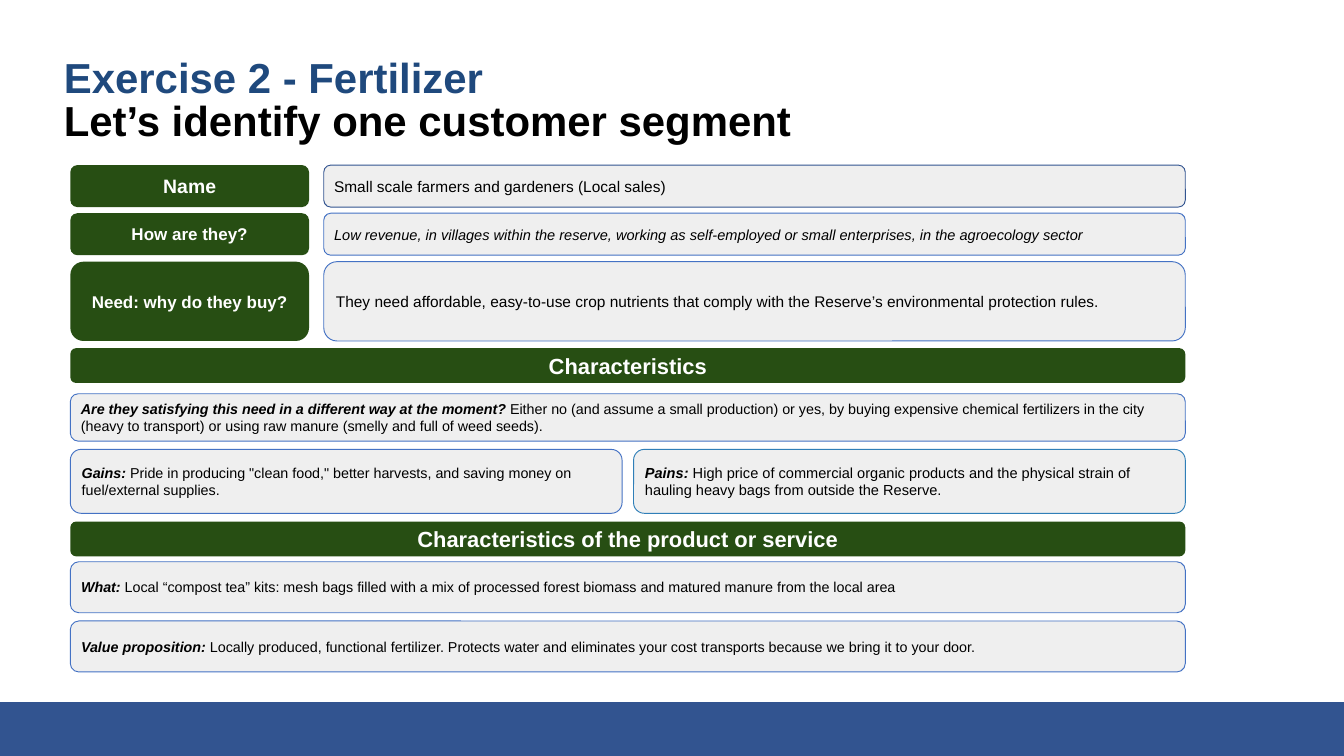
import dataclasses

import pptx
import pptx.dml.color
import pptx.enum.shapes
import pptx.enum.text
import pptx.util

Cm = pptx.util.Cm
ALIGN = pptx.enum.text.PP_ALIGN
ANCHOR = pptx.enum.text.MSO_ANCHOR
SHAPE = pptx.enum.shapes.MSO_SHAPE


@dataclasses.dataclass(frozen=True)
class Theme:
    font: str = "Arial"
    title: str = "1F497D"
    text: str = "000000"
    light: str = "FFFFFF"
    green: str = "274E13"
    panel: str = "EFEFEF"
    footer: str = "325490"
    border: str = "4472C4"
    border_pains: str = "2F7FB8"
    title_size: float = 33.1
    band_size: float = 17.3
    name_size: float = 15.3
    label_size: float = 13.4
    answer_size: float = 12.2
    note_size: float = 11.5
    body_size: float = 11.3


def rgb(value):
    return pptx.dml.color.RGBColor.from_string(value)


class SlideBuilder:
    def __init__(self, prs, theme):
        self.theme = theme
        self.s = prs.slides.add_slide(prs.slide_layouts[6])

    def frame(self, sp, anchor, side=0.0, edge=0.0):
        tf = sp.text_frame
        values = {
            "word_wrap": True,
            "vertical_anchor": anchor,
            "margin_left": Cm(side),
            "margin_right": Cm(side),
            "margin_top": Cm(edge),
            "margin_bottom": Cm(edge),
        }
        for name, value in values.items():
            setattr(tf, name, value)
        return tf

    def run(self, p, text, size, color, bold=False, italic=False):
        r = p.add_run()
        r.text = text
        values = {
            "name": self.theme.font,
            "size": pptx.util.Pt(size),
            "bold": bold,
            "italic": italic,
        }
        for name, value in values.items():
            setattr(r.font, name, value)
        r.font.color.rgb = rgb(color)

    def shape(self, kind, box, fill, line=None):
        sp = self.s.shapes.add_shape(kind, *map(Cm, box))
        sp.shadow.inherit = False
        sp.fill.solid()
        sp.fill.fore_color.rgb = rgb(fill)
        if line:
            sp.line.color.rgb = rgb(line)
            sp.line.width = pptx.util.Pt(0.75)
        else:
            sp.line.fill.background()
        return sp

    def footer(self, box):
        self.shape(SHAPE.RECTANGLE, box, self.theme.footer)

    def title(self, box, lines):
        sp = self.s.shapes.add_textbox(*map(Cm, box))
        tf = self.frame(sp, ANCHOR.TOP)
        for i, (text, color) in enumerate(lines):
            p = tf.add_paragraph() if i else tf.paragraphs[0]
            p.line_spacing = 0.85
            self.run(p, text, self.theme.title_size, color, bold=True)

    def label(self, box, text, size):
        sp = self.shape(SHAPE.ROUNDED_RECTANGLE, box, self.theme.green)
        p = self.frame(sp, ANCHOR.MIDDLE, 0.25, 0.13).paragraphs[0]
        p.alignment = ALIGN.CENTER
        self.run(p, text, size, self.theme.light, bold=True)

    def panel(self, box, text, size, lead="", italic=False, line=None):
        theme = self.theme
        sp = self.shape(SHAPE.ROUNDED_RECTANGLE, box, theme.panel, line or theme.border)
        p = self.frame(sp, ANCHOR.MIDDLE, 0.23, 0.1).paragraphs[0]
        p.alignment = ALIGN.LEFT
        if lead:
            self.run(p, lead + " ", size, theme.text, bold=True, italic=True)
        self.run(p, text, size, theme.text, italic=italic)


def main():
    prs = pptx.Presentation()
    prs.slide_width, prs.slide_height = Cm(37.44), Cm(21.06)
    theme = Theme()
    slide = SlideBuilder(prs, theme)

    left, width = 1.96, 31.06
    label_width, answer_width, half_width = 6.65, 24, 15.37
    answer_left = left + width - answer_width
    pains_left = left + width - half_width

    slide.footer((0, 19.56, 37.44, 1.5))
    slide.title((1.78, 1.65, 28.78, 1.09), [
        ("Exercise 2 - Fertilizer", theme.title),
        ("Let’s identify one customer segment", theme.text),
    ])

    profile = [
        (4.6, 1.17, "Name", theme.name_size,
         "Small scale farmers and gardeners (Local sales)",
         {"size": theme.answer_size, "line": theme.footer}),
        (5.94, 1.17, "How are they?", theme.label_size,
         "Low revenue, in villages within the reserve, working as self-employed "
         "or small enterprises, in the agroecology sector",
         {"size": theme.note_size, "italic": True}),
        (7.29, 2.21, "Need: why do they buy?", theme.label_size,
         "They need affordable, easy-to-use crop nutrients that comply with "
         "the Reserve’s environmental protection rules.",
         {"size": theme.answer_size}),
    ]
    for top, height, label, size, answer, style in profile:
        slide.label((left, top, label_width, height), label, size)
        slide.panel((answer_left, top, answer_width, height), answer, **style)

    bands = [
        (9.7, "Characteristics"),
        (14.53, "Characteristics of the product or service"),
    ]
    for top, text in bands:
        slide.label((left, top, width, 0.97), text, theme.band_size)

    details = [
        ((left, 10.97, width, 1.32),
         "Are they satisfying this need in a different way at the moment?",
         "Either no (and assume a small production) or yes, by buying expensive "
         "chemical fertilizers in the city (heavy to transport) or using raw "
         "manure (smelly and full of weed seeds)."),
        ((left, 12.52, half_width, 1.78), "Gains:",
         'Pride in producing "clean food," better harvests, and saving money on '
         "fuel/external supplies."),
        ((left, 15.65, width, 1.42), "What:",
         "Local “compost tea” kits: mesh bags filled with a mix of processed "
         "forest biomass and matured manure from the local area"),
        ((left, 17.3, width, 1.42), "Value proposition:",
         "Locally produced, functional fertilizer. Protects water and eliminates "
         "your cost transports because we bring it to your door."),
    ]
    for box, lead, text in details:
        slide.panel(box, text, theme.body_size, lead)
    slide.panel(
        (pains_left, 12.52, half_width, 1.78),
        "High price of commercial organic products and the physical strain of "
        "hauling heavy bags from outside the Reserve.",
        theme.note_size, "Pains:", line=theme.border_pains)

    prs.save("out.pptx")


if __name__ == "__main__":
    main()
